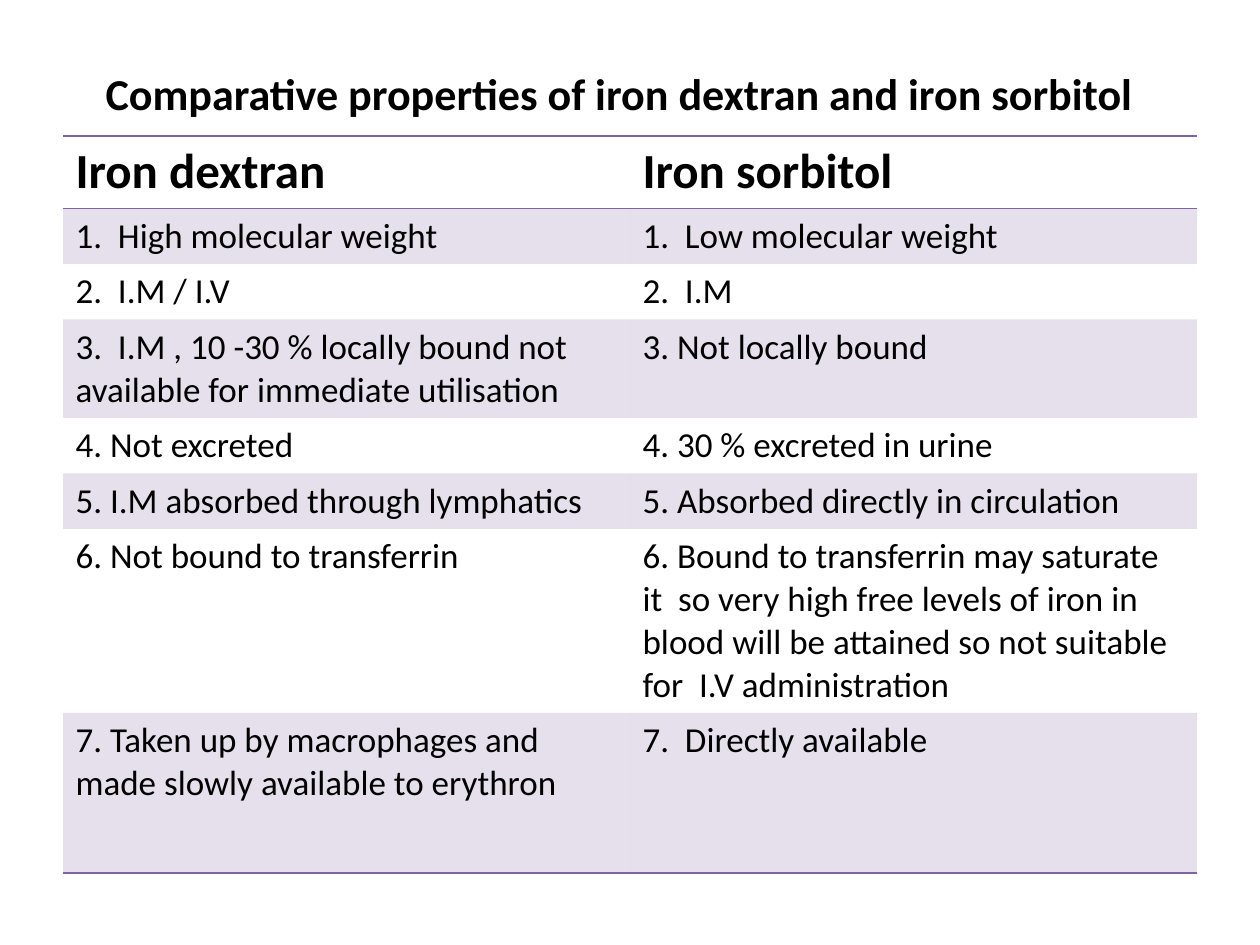
import dataclasses

import lxml.etree
import pptx
import pptx.dml.color
import pptx.enum.text
import pptx.oxml.ns
import pptx.util
from pptx.util import Cm


@dataclasses.dataclass(frozen=True)
class Theme:
    font: str = "Calibri"
    text: str = "000000"
    accent: str = "8064A2"
    band_opacity: int = 20
    title_size: float = 25.2
    header_size: float = 28
    body_size: float = 20
    rule_width: float = 1
    plain_table_style: str = "{2D5ABB26-0587-4C30-8999-92F81FD0307C}"


class SlideBuilder:
    def __init__(self, slide, theme):
        self.slide = slide
        self.theme = theme

    def format_text(self, text_frame, size, bold=False):
        for paragraph in text_frame.paragraphs:
            for run in paragraph.runs:
                run.font.name = self.theme.font
                run.font.size = pptx.util.Pt(size)
                run.font.bold = bold
                run.font.color.rgb = pptx.dml.color.RGBColor.from_string(self.theme.text)

    def add_title(self, text, left, top, width, height, bottom_margin):
        title = self.slide.shapes.title
        title.left, title.top, title.width, title.height = left, top, width, height
        text_frame = title.text_frame
        text_frame.text = text
        text_frame.word_wrap = True
        text_frame.auto_size = pptx.enum.text.MSO_AUTO_SIZE.NONE
        text_frame.vertical_anchor = pptx.enum.text.MSO_ANCHOR.MIDDLE
        text_frame.margin_bottom = bottom_margin
        text_frame.paragraphs[0].alignment = pptx.enum.text.PP_ALIGN.CENTER
        self.format_text(text_frame, self.theme.title_size, bold=True)

    def add_rule(self, cell, side):
        """Draw a border on one side of a cell: lnT for top, lnB for bottom."""
        qualified = pptx.oxml.ns.qn
        properties = cell._tc.get_or_add_tcPr()
        line = lxml.etree.SubElement(properties, qualified(f"a:{side}"))
        line.set("w", str(pptx.util.Pt(self.theme.rule_width)))
        fill = lxml.etree.SubElement(line, qualified("a:solidFill"))
        lxml.etree.SubElement(fill, qualified("a:srgbClr")).set("val", self.theme.accent)

    def fill_band(self, cell):
        """Fill a cell with the translucent accent colour."""
        cell.fill.solid()
        cell.fill.fore_color.rgb = pptx.dml.color.RGBColor.from_string(self.theme.accent)
        color = cell._tc.tcPr.find(".//" + pptx.oxml.ns.qn("a:solidFill") + "[last()]/"
                                   + pptx.oxml.ns.qn("a:srgbClr"))
        fill = cell._tc.tcPr.find(pptx.oxml.ns.qn("a:solidFill"))
        color = fill.find(pptx.oxml.ns.qn("a:srgbClr"))
        alpha = lxml.etree.SubElement(color, pptx.oxml.ns.qn("a:alpha"))
        alpha.set("val", str(self.theme.band_opacity * 1000))

    def add_table(self, rows, row_heights, left, top, width):
        """Add a table with a ruled header, banded odd rows and a closing rule."""
        shape = self.slide.shapes.add_table(
            len(rows), len(rows[0]), left, top, width, sum(row_heights))
        table = shape.table
        table.horz_banding = False
        style_id = table._tbl.tblPr.find(pptx.oxml.ns.qn("a:tableStyleId"))
        style_id.text = self.theme.plain_table_style
        for row_index, (texts, height) in enumerate(zip(rows, row_heights)):
            table.rows[row_index].height = height
            is_header = row_index == 0
            size = self.theme.header_size if is_header else self.theme.body_size
            for column_index, text in enumerate(texts):
                cell = table.cell(row_index, column_index)
                cell.text_frame.text = text
                self.format_text(cell.text_frame, size, bold=is_header)
                if is_header:
                    self.add_rule(cell, "lnT")
                if is_header or row_index == len(rows) - 1:
                    self.add_rule(cell, "lnB")
                if row_index % 2:
                    self.fill_band(cell)
                else:
                    cell.fill.background()


PROPERTIES = [
    ("Iron dextran", "Iron sorbitol"),
    ("1.  High molecular weight", "1.  Low molecular weight"),
    ("2.  I.M / I.V", "2.  I.M"),
    ("3.  I.M , 10 -30 % locally bound not available for immediate utilisation",
     "3. Not locally bound"),
    ("4. Not excreted", "4. 30 % excreted in urine"),
    ("5. I.M absorbed through lymphatics", "5. Absorbed directly in circulation"),
    ("6. Not bound to transferrin",
     "6. Bound to transferrin may saturate it  so very high free levels of iron in "
     "blood will be attained so not suitable for  I.V administration"),
    ("7. Taken up by macrophages and made slowly available to erythron",
     "7.  Directly available"),
]
ROW_HEIGHTS = [Cm(height) for height in (1.37, 1.07, 1.07, 1.88, 1.07, 1.07, 3.63, 3.23)]


def main():
    presentation = pptx.Presentation()
    presentation.slide_width, presentation.slide_height = Cm(25.4), Cm(19.05)
    title_only = presentation.slide_layouts.get_by_name("Title Only")
    builder = SlideBuilder(presentation.slides.add_slide(title_only), Theme())
    builder.add_title("Comparative properties of iron dextran and iron sorbitol",
                      Cm(0.84), Cm(0.76), Cm(23.29), Cm(3.18), bottom_margin=Cm(1.07))
    builder.add_table(PROPERTIES, ROW_HEIGHTS, Cm(1.27), Cm(2.74), Cm(22.86))
    presentation.save("out.pptx")


if __name__ == "__main__":
    main()
